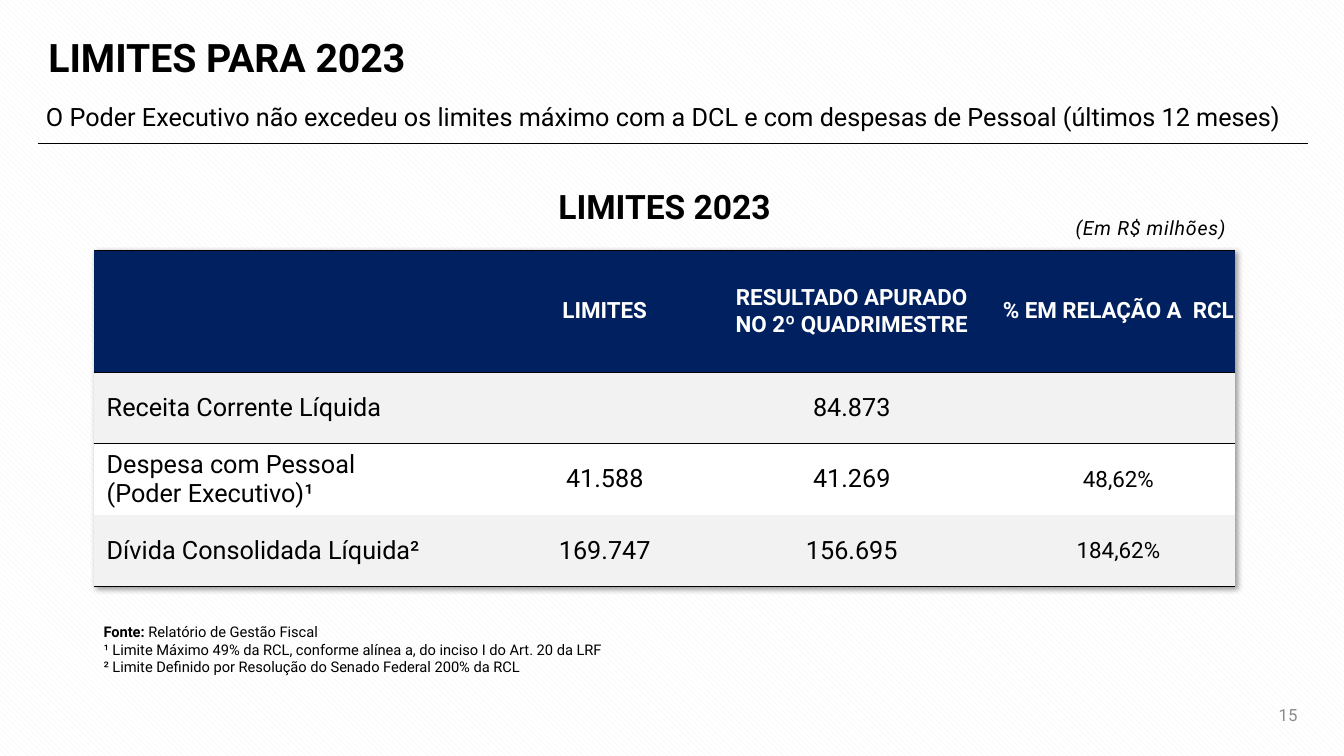
from dataclasses import dataclass, field

from lxml import etree
from pptx import Presentation
from pptx import util as u
from pptx.dml.color import RGBColor
from pptx.enum import dml, shapes, text
from pptx.oxml import parse_xml
from pptx.oxml.ns import nsdecls, qn

FONT = "Roboto"
BLACK, WHITE, NAVY, PALE, GREY = "000000", "FFFFFF", "002060", "F2F2F2", "8C8C8C"
LEFT, MID, RIGHT = text.PP_ALIGN.LEFT, text.PP_ALIGN.CENTER, text.PP_ALIGN.RIGHT
TOP, HALF = text.MSO_ANCHOR.TOP, text.MSO_ANCHOR.MIDDLE


@dataclass
class Label:
    words: str
    box: tuple[float, float, float, float]
    anchor: text.MSO_ANCHOR = TOP
    style: dict = field(default_factory=dict)


@dataclass
class Row:
    cells: tuple[str, str, str, str]
    high: float
    fill: str
    edges: tuple[str, ...] = ()
    head: bool = False


LABELS = [
    Label("LIMITES PARA 2023", (0.97, 0.51, 19.94, 2.01), HALF,
          dict(size=28, bold=True, space=0.9)),
    Label("O Poder Executivo não excedeu os limites máximo com a DCL e com "
          "despesas de Pessoal (últimos 12 meses)",
          (0.91, 2.11, 32, 1.5), HALF, dict(size=18, space=1.2)),
    Label("LIMITES 2023", (2.36, 4.57, 28.78, 1.27), TOP,
          dict(size=24, bold=True, align=MID)),
    Label("(Em R$ milhões)", (25.83, 5.21, 5.31, 1.07), TOP,
          dict(size=14, italic=True, align=RIGHT, space=1.2, track=50)),
    Label("Relatório de Gestão Fiscal\n"
          "¹ Limite Máximo 49% da RCL, conforme alínea a, do inciso I do Art. 20 da LRF\n"
          "² Limite Definido por Resolução do Senado Federal 200% da RCL",
          (2.36, 15.57, 19.66, 1.6), TOP, dict(size=10.5, lead="Fonte: ")),
    Label("15", (30.51, 17.5, 2.44, 1.02), HALF,
          dict(size=12, tint=GREY, align=RIGHT)),
]

WIDTHS = (10.44, 4.88, 7.57, 5.87)
ROWS = [
    Row(("", "LIMITES", "RESULTADO APURADO\nNO 2º QUADRIMESTRE", "% EM RELAÇÃO A  RCL"),
        3.07, NAVY, ("lnT", "lnB"), True),
    Row(("Receita Corrente Líquida", "", "84.873", ""), 1.8, PALE, ("lnT",)),
    Row(("Despesa com Pessoal\n(Poder Executivo)¹", "41.588", "41.269", "48,62%"),
        1.8, WHITE),
    Row(("Dívida Consolidada Líquida²", "169.747", "156.695", "184,62%"),
        1.8, PALE, ("lnB",)),
]


def color(code: str) -> RGBColor:
    return RGBColor.from_string(code)


def write(frame, words: str, *, size: float, tint: str = BLACK, bold: bool = False,
          italic: bool = False, align=LEFT, space: float = 1.0, track: int = 0,
          lead: str = "") -> None:
    """Fill a frame, one paragraph a line; lead is a bold start."""
    for i, line in enumerate(words.split("\n")):
        para = frame.paragraphs[0] if i == 0 else frame.add_paragraph()
        para.alignment, para.line_spacing = align, space
        parts = [(lead, True)] if lead and i == 0 else []
        for part, heavy in parts + [(line, bold)]:
            run = para.add_run()
            run.text = part
            font = run.font
            font.name, font.size = FONT, u.Pt(size)
            font.bold, font.italic = heavy, italic
            font.color.rgb = color(tint)
            if track:
                font._element.set("spc", str(track))


def add_label(slide, label: Label) -> None:
    frame = slide.shapes.add_textbox(*map(u.Cm, label.box)).text_frame
    frame.word_wrap = True
    frame.vertical_anchor = label.anchor
    write(frame, label.words, **label.style)


def add_rule(slide, left: float, right: float, top: float) -> None:
    rule = slide.shapes.add_connector(
        shapes.MSO_CONNECTOR.STRAIGHT, u.Cm(left), u.Cm(top), u.Cm(right), u.Cm(top))
    rule.line.color.rgb = color(BLACK)
    rule.line.width = u.Pt(0.5)
    etree.SubElement(rule._element.spPr, qn("a:effectLst"))


def add_edges(cell, edges: tuple[str, ...]) -> None:
    for i, edge in enumerate(edges):
        cell._tc.get_or_add_tcPr().insert(i, parse_xml(
            f'<a:{edge} {nsdecls("a")} w="{u.Pt(0.5)}"><a:solidFill>'
            f'<a:srgbClr val="{BLACK}"/></a:solidFill></a:{edge}>'))


def add_grid(slide, left: float, top: float) -> None:
    high = sum(row.high for row in ROWS)
    grid = slide.shapes.add_table(len(ROWS), len(WIDTHS), u.Cm(left), u.Cm(top),
                                  u.Cm(sum(WIDTHS)), u.Cm(high)).table
    grid.first_row = grid.horz_banding = False
    # Plain table style with a soft shadow
    props = grid._tbl.tblPr
    props.find(qn("a:tableStyleId")).text = "{2D5ABB26-0587-4C30-8999-92F81FD0307C}"
    props.insert(0, parse_xml(
        f'<a:effectLst {nsdecls("a")}><a:outerShdw blurRad="50800" dist="38100" '
        f'dir="2700000" algn="tl" rotWithShape="0"><a:srgbClr val="{BLACK}">'
        '<a:alpha val="40000"/></a:srgbClr></a:outerShdw></a:effectLst>'))
    for col, wide in zip(grid.columns, WIDTHS):
        col.width = u.Cm(wide)
    for r, row in enumerate(ROWS):
        grid.rows[r].height = u.Cm(row.high)
        for c, words in enumerate(row.cells):
            cell = grid.cell(r, c)
            cell.fill.solid()
            cell.fill.fore_color.rgb = color(row.fill)
            cell.vertical_anchor = HALF
            cell.margin_left = u.Cm(0.02 if c else 0.33)
            cell.margin_right = cell.margin_top = u.Cm(0.02)
            cell.margin_bottom = 0
            add_edges(cell, row.edges)
            if words:
                small = row.head or c == len(WIDTHS) - 1
                write(cell.text_frame, words, size=16 if small else 18,
                      tint=WHITE if row.head else BLACK, bold=row.head,
                      align=MID if c else LEFT)


def main() -> None:
    deck = Presentation()
    deck.slide_width, deck.slide_height = u.Cm(33.87), u.Cm(19.05)
    slide = deck.slides.add_slide(deck.slide_layouts[6])
    # Striped background
    back = slide.background.fill
    back.patterned()
    back.pattern = dml.MSO_PATTERN.WIDE_DOWNWARD_DIAGONAL
    back.fore_color.rgb, back.back_color.rgb = color(PALE), color(WHITE)
    # Rule, table and texts
    add_rule(slide, 0.97, 32.97, 3.61)
    add_grid(slide, 2.36, 6.3)
    for label in LABELS:
        add_label(slide, label)
    deck.save("out.pptx")


if __name__ == "__main__":
    main()
